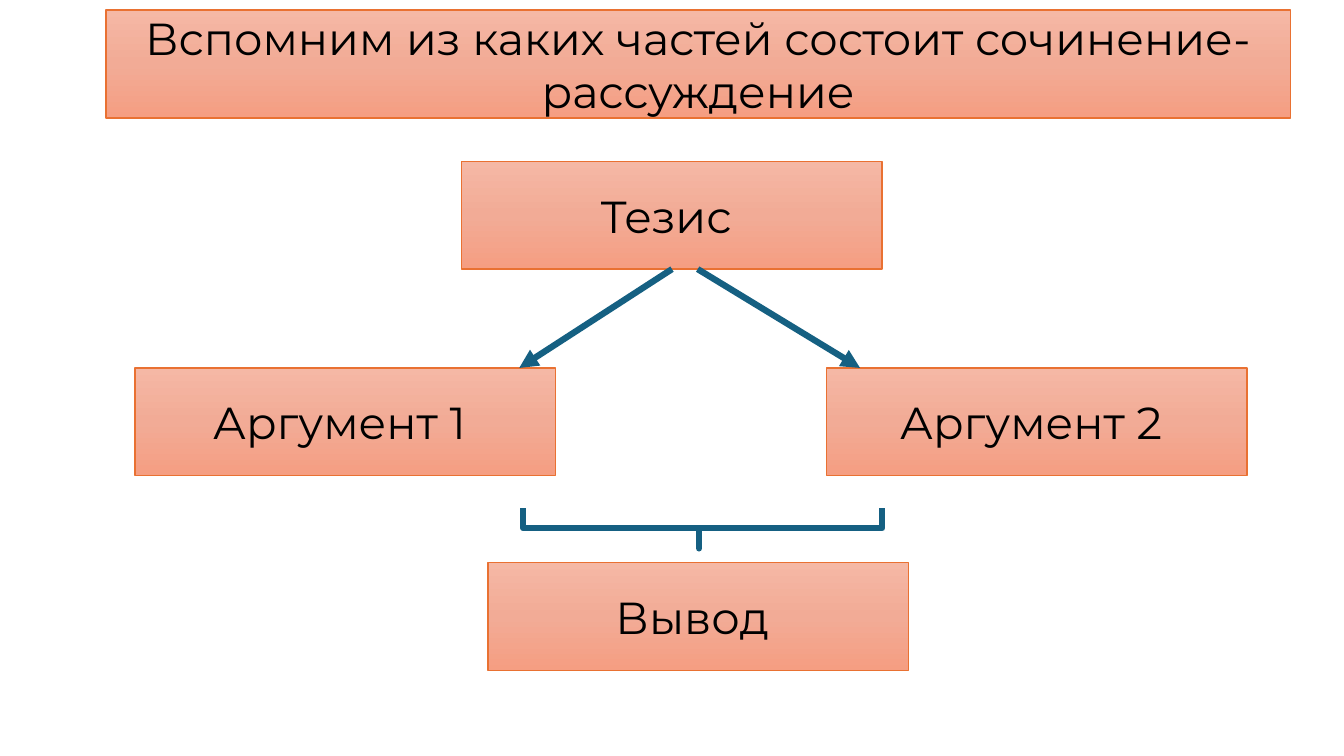
from copy import deepcopy

from pptx import Presentation
from pptx.dml.color import RGBColor
from pptx.enum.shapes import MSO_CONNECTOR, MSO_SHAPE
from pptx.enum.text import MSO_ANCHOR, PP_ALIGN
from pptx.oxml.ns import qn
from pptx.util import Inches, Pt
from lxml.etree import SubElement

BLACK = RGBColor(0x00, 0x00, 0x00)
ORANGE = RGBColor(0xE9, 0x71, 0x32)
TEAL = RGBColor(0x15, 0x60, 0x82)
PEACH_STOPS = [
    (0, RGBColor(0xF5, 0xB8, 0xA5)),
    (0.5, RGBColor(0xF2, 0xAB, 0x96)),
    (1, RGBColor(0xF5, 0x9E, 0x82)),
]
BOX_WIDTH, BOX_HEIGHT = 4.17, 1.07
ARGUMENT_TOP = 3.65

prs = Presentation()
prs.slide_width, prs.slide_height = Inches(13.33), Inches(7.5)
slide = prs.slides.add_slide(prs.slide_layouts[6])
shapes = slide.shapes


def add_box(text, left, top, width=BOX_WIDTH):
    box = shapes.add_shape(MSO_SHAPE.RECTANGLE, Inches(left), Inches(top),
                           Inches(width), Inches(BOX_HEIGHT))
    box.shadow.inherit = False
    box.fill.gradient()
    box.fill.gradient_angle = 270
    first_stop = next(box._element.spPr.iter(qn("a:gs")))
    first_stop.addnext(deepcopy(first_stop))
    for stop, (position, color) in zip(box.fill.gradient_stops, PEACH_STOPS):
        stop.position = position
        stop.color.rgb = color
    box.line.color.rgb = ORANGE
    box.line.width = Pt(1)

    box.text_frame.word_wrap = True
    box.text_frame.vertical_anchor = MSO_ANCHOR.MIDDLE
    label = box.text_frame.paragraphs[0]
    label.text = text
    label.alignment = PP_ALIGN.CENTER
    label.font.name = "Montserrat"
    label.font.size = Pt(32)
    label.font.color.rgb = BLACK
    return box


def add_arrow(start_x, end_x):
    """Draw an arrow from the thesis row down to the argument row."""
    arrow = shapes.add_connector(MSO_CONNECTOR.STRAIGHT, Inches(start_x), Inches(2.67),
                                 Inches(end_x), Inches(ARGUMENT_TOP))
    arrow.line.color.rgb = TEAL
    arrow.line.width = Pt(4.5)
    SubElement(arrow.line._get_or_add_ln(), qn("a:tailEnd"), type="triangle")
    SubElement(arrow._element.spPr, qn("a:effectLst"))
    return arrow


add_box("Вспомним из каких частей состоит сочинение-рассуждение", 1.05, 0.1, 11.75)
thesis = add_box("Тезис ", 4.58, 1.6)
add_box("Аргумент 1 ", 1.34, ARGUMENT_TOP)
add_box("Аргумент 2 ", 8.2, ARGUMENT_TOP)
add_box("Вывод ", 4.84, 5.58)

add_arrow(6.67, 5.15).begin_connect(thesis, 2)
add_arrow(6.92, 8.53)

brace = shapes.add_shape(MSO_SHAPE.LEFT_BRACE, Inches(6.77), Inches(3.46),
                         Inches(0.4), Inches(3.56))
brace.rotation = 270
brace.adjustments[0] = 0
brace.adjustments[1] = 0.49
brace.shadow.inherit = False
brace.fill.background()
brace.line.color.rgb = TEAL
brace.line.width = Pt(4.5)

prs.save("out.pptx")
